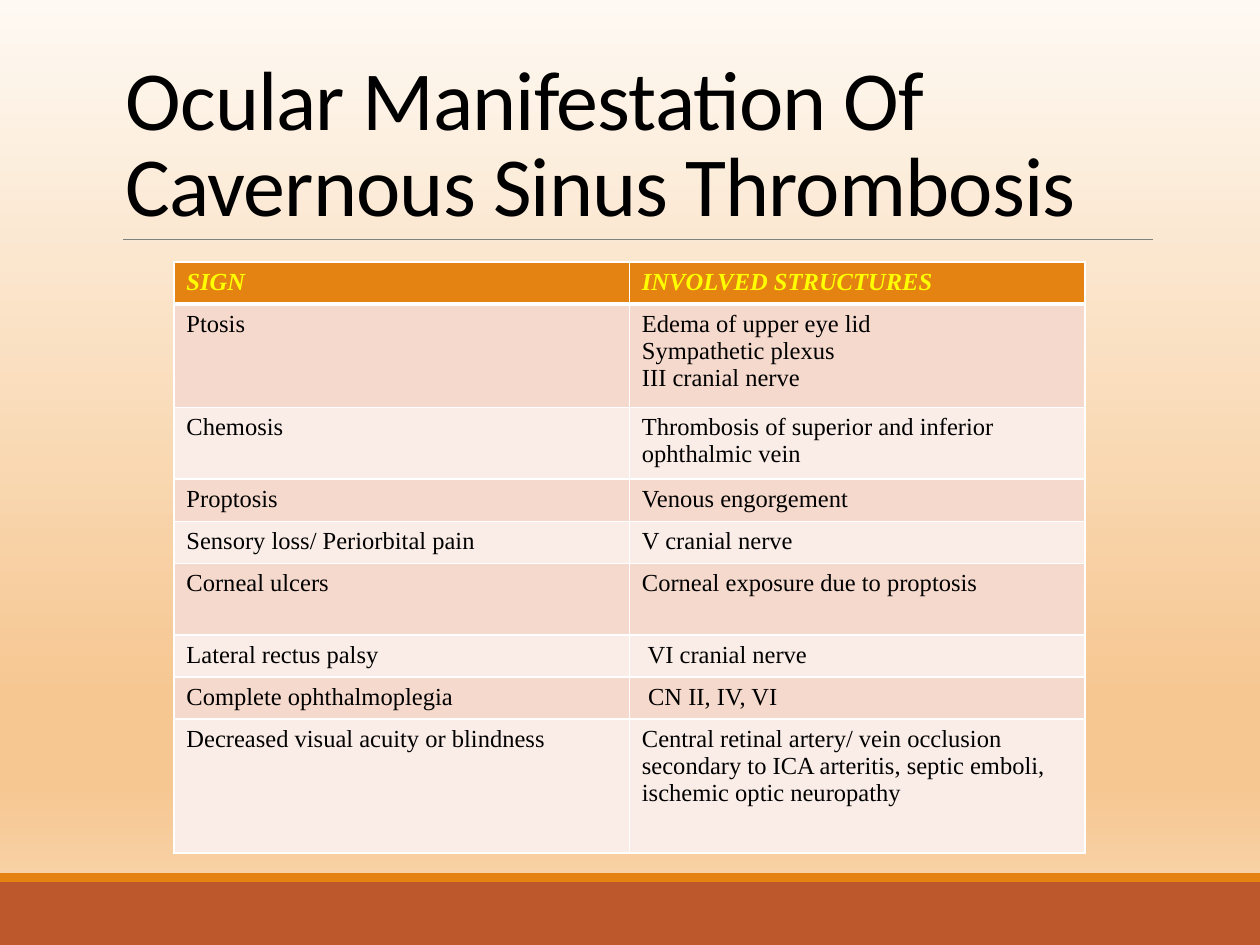
from lxml import etree
from pptx import Presentation
from pptx import util as u
from pptx.dml.color import RGBColor
from pptx.enum import shapes, text
from pptx.oxml import ns


def color(hex_string):
    return RGBColor.from_string(hex_string)


def add_node(parent, tag, **attributes):
    """Append a DrawingML element such as a:ln and return it."""
    node = etree.SubElement(parent, ns.qn(tag))
    for key, value in attributes.items():
        node.set(key, str(value))
    return node


prs = Presentation()
prs.slide_width = u.Inches(10)
prs.slide_height = u.Inches(7.5)
slide = prs.slides.add_slide(prs.slide_layouts[6])

# Background gradient, top to bottom
background = slide.background.fill
background.gradient()
background.gradient_angle = 270
stops = slide.background._cSld.find(".//" + ns.qn("a:gsLst"))
for stop in list(stops):
    stops.remove(stop)
for percent, shade in [(0, "FEF9F3"), (74, "F6C791"), (83, "F6C791"), (100, "F9DAB6")]:
    stop = add_node(stops, "a:gs", pos=percent * 1000)
    add_node(stop, "a:srgbClr", val=shade)

# Footer bands
for top, height, shade in [(7, 0.5, "BD582C"), (6.93, 0.07, "E48312")]:
    band = slide.shapes.add_shape(shapes.MSO_SHAPE.RECTANGLE, 0, u.Inches(top),
                                  prs.slide_width, u.Inches(height))
    band.shadow.inherit = False
    band.fill.solid()
    band.fill.fore_color.rgb = color(shade)
    band.line.fill.background()

# Title and its rule
rule = slide.shapes.add_connector(shapes.MSO_CONNECTOR.STRAIGHT, u.Inches(0.98), u.Inches(1.9),
                                  u.Inches(9.15), u.Inches(1.9))
rule.line.color.rgb = color("808080")
rule.line.width = u.Pt(0.5)
add_node(rule._element.spPr, "a:effectLst")

title = slide.shapes.add_textbox(u.Inches(0.9), u.Inches(0.31), u.Inches(8.25), u.Inches(1.59))
title.text_frame.word_wrap = True
title.text_frame.vertical_anchor = text.MSO_ANCHOR.BOTTOM
heading = title.text_frame.paragraphs[0]
heading.line_spacing = 0.85
heading_run = heading.add_run()
heading_run.text = "Ocular Manifestation Of Cavernous Sinus Thrombosis"
heading_run.font.name = "Calibri"
heading_run.font.size = u.Pt(48)
heading_run.font.color.rgb = color("000000")
heading_run.font._element.set("spc", "-50")

# Table of signs: row height, sign, involved structures
rows = [
    (0.33, "SIGN", "INVOLVED STRUCTURES"),
    (0.82, "Ptosis", "Edema of upper eye lid\nSympathetic plexus\nIII cranial nerve"),
    (0.57, "Chemosis", "Thrombosis of superior and inferior ophthalmic vein"),
    (0.33, "Proptosis", "Venous engorgement"),
    (0.33, "Sensory loss/ Periorbital pain", "V cranial nerve"),
    (0.57, "Corneal ulcers", "Corneal exposure due to proptosis"),
    (0.33, "Lateral rectus palsy", " VI cranial nerve"),
    (0.33, "Complete ophthalmoplegia", " CN II, IV, VI"),
    (1.06, "Decreased visual acuity or blindness",
     "Central retinal artery/ vein occlusion secondary to ICA arteritis, "
     "septic emboli, ischemic optic neuropathy"),
]
signs = slide.shapes.add_table(len(rows), 2, u.Inches(1.38), u.Inches(2.08),
                               u.Inches(7.23), u.Inches(4.67)).table
for r, (height, *entries) in enumerate(rows):
    signs.rows[r].height = u.Inches(height)
    is_header = r == 0
    shade = "E48312" if is_header else ("FAEDE7", "F5D9CC")[r % 2]
    for c, entry in enumerate(entries):
        cell = signs.cell(r, c)
        cell.text = entry
        for paragraph in cell.text_frame.paragraphs:
            paragraph.font.name = "Times New Roman"
            paragraph.font.size = u.Pt(14)
            paragraph.font.bold = paragraph.font.italic = is_header
            paragraph.font.color.rgb = color("FFFF00" if is_header else "000000")
        for side in "LRTB":
            below_header = (r, side) in [(0, "B"), (1, "T")]
            border = add_node(cell._tc.get_or_add_tcPr(), "a:ln" + side,
                              w=u.Pt(3 if below_header else 1))
            add_node(add_node(border, "a:solidFill"), "a:srgbClr", val="FFFFFF")
        cell.fill.solid()
        cell.fill.fore_color.rgb = color(shade)

prs.save("out.pptx")
